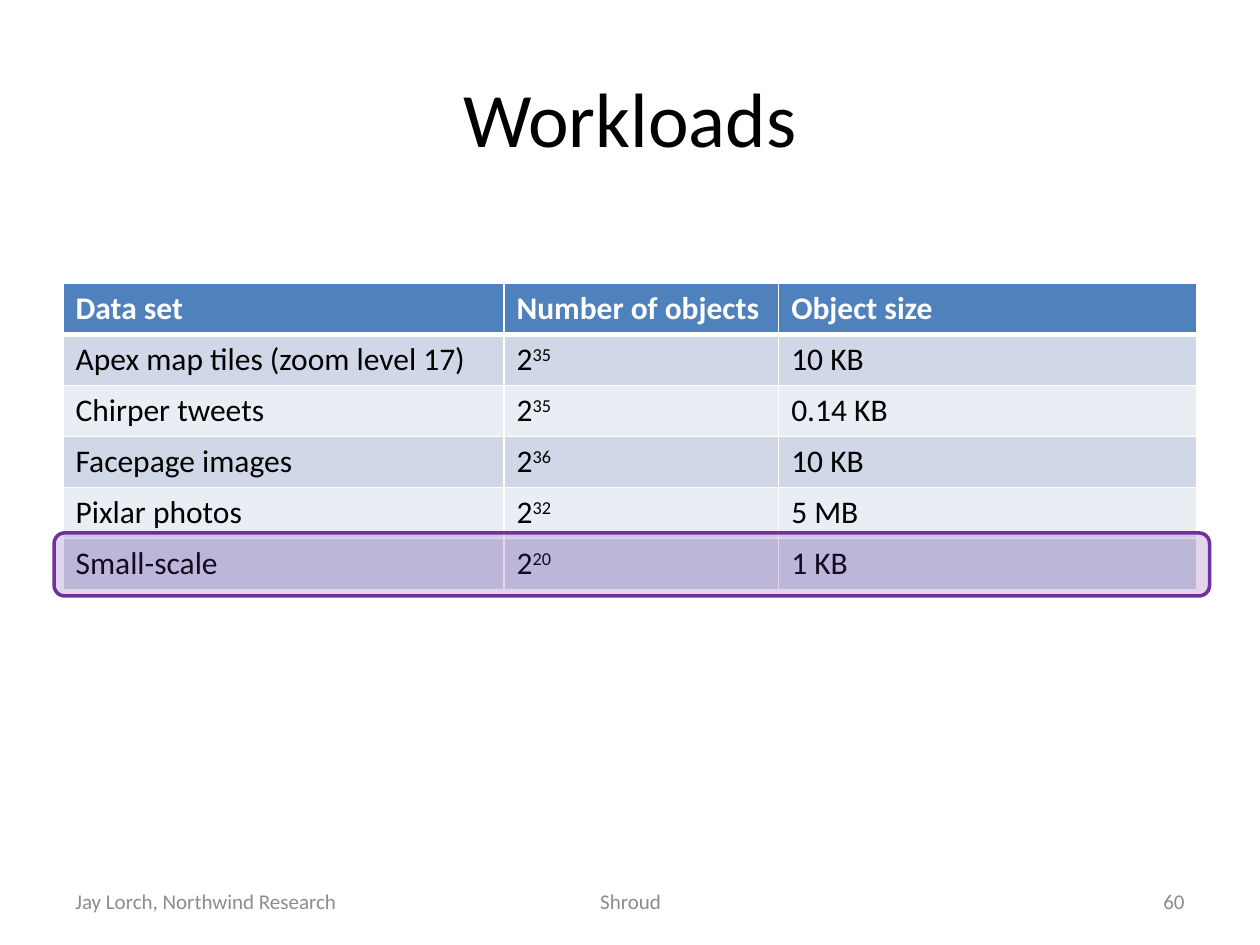
from lxml import etree
from pptx import Presentation
from pptx.dml.color import RGBColor
from pptx.enum.shapes import MSO_SHAPE
from pptx.enum.text import MSO_ANCHOR, PP_ALIGN
from pptx.oxml.ns import qn
from pptx.util import Emu, Pt

ROUNDED = MSO_SHAPE.ROUNDED_RECTANGLE
MIDDLE = MSO_ANCHOR.MIDDLE
LEFT, CENTER, RIGHT = PP_ALIGN.LEFT, PP_ALIGN.CENTER, PP_ALIGN.RIGHT
PX_PER_INCH = 200
EMU_PER_PX = 914400 // PX_PER_INCH

BLACK, WHITE, GRAY = "000000", "FFFFFF", "8C8C8C"
HEADER_BLUE, PURPLE = "4F81BD", "7030A0"
BANDS = ("E9EDF4", "D0D8E8")

COLUMN_WIDTHS = (700, 436, 664)
ROW_HEIGHT = 81
WORKLOADS = (
    ("Data set", "Number of objects", "Object size"),
    ("Apex map tiles (zoom level 17)", "2^35", "10 KB"),
    ("Chirper tweets", "2^35", "0.14 KB"),
    ("Facepage images", "2^36", "10 KB"),
    ("Pixlar photos", "2^32", "5 MB"),
    ("Small-scale", "2^20", "1 KB"),
)
FOOTERS = (
    (100, 466, "Jay Lorch, Northwind Research", LEFT),
    (684, 634, "Shroud", CENTER),
    (1434, 466, "60", RIGHT),
)


def px(length):
    return Emu(length * EMU_PER_PX)


def color(value):
    return RGBColor.from_string(value)


class SlideBuilder:
    font = "Calibri"

    def __init__(self, slide):
        self.slide = slide

    def run(self, paragraph, text, size, ink, bold=False, baseline=None):
        run = paragraph.add_run()
        run.text = text
        run.font.name = self.font
        run.font.size = Pt(size)
        run.font.bold = bold
        run.font.color.rgb = color(ink)
        if baseline:
            run.font._element.set("baseline", str(baseline * 1000))

    def text(self, box, text, size, ink, alignment):
        shape = self.slide.shapes.add_textbox(*map(px, box))
        frame = shape.text_frame
        frame.word_wrap = True
        frame.vertical_anchor = MIDDLE
        paragraph = frame.paragraphs[0]
        paragraph.alignment = alignment
        self.run(paragraph, text, size, ink)

    def borders(self, cell, widths):
        properties = cell._tc.get_or_add_tcPr()
        for index, (side, width) in enumerate(widths.items()):
            line = etree.Element(qn(f"a:ln{side}"), w=str(Pt(width)))
            fill = etree.SubElement(line, qn("a:solidFill"))
            etree.SubElement(fill, qn("a:srgbClr"), val=WHITE)
            properties.insert(index, line)

    def table(self, left, top, rows, column_widths, row_height):
        box = (left, top, sum(column_widths), row_height * len(rows))
        frame = self.slide.shapes.add_table(len(rows), len(column_widths), *map(px, box))
        table = frame.table
        for column, width in zip(table.columns, column_widths):
            column.width = px(width)
        for row_index, values in enumerate(rows):
            table.rows[row_index].height = px(row_height)
            header = row_index == 0
            top_width = 3 if row_index == 1 else 1
            widths = {"L": 1, "R": 1, "T": top_width, "B": 3 if header else 1}
            for column_index, value in enumerate(values):
                cell = table.cell(row_index, column_index)
                cell.fill.solid()
                cell.fill.fore_color.rgb = color(HEADER_BLUE if header else BANDS[row_index % 2])
                self.borders(cell, widths)
                paragraph = cell.text_frame.paragraphs[0]
                ink = WHITE if header else BLACK
                base, _, exponent = value.partition("^")
                self.run(paragraph, base, 18, ink, header)
                if exponent:
                    self.run(paragraph, exponent, 18, ink, header, 30)

    def highlight(self, box, ink, opacity):
        shape = self.slide.shapes.add_shape(ROUNDED, *map(px, box))
        shape.shadow.inherit = False
        shape.fill.solid()
        shape.fill.fore_color.rgb = color(ink)
        fill_color = shape._element.spPr.find(qn("a:solidFill"))[0]
        etree.SubElement(fill_color, qn("a:alpha"), val=str(opacity * 1000))
        shape.line.color.rgb = color(ink)
        shape.line.width = Pt(2)


def main():
    presentation = Presentation()
    presentation.slide_width = px(2000)
    presentation.slide_height = px(1500)
    builder = SlideBuilder(presentation.slides.add_slide(presentation.slide_layouts[6]))
    builder.text((100, 60, 1800, 250), "Workloads", 44, BLACK, CENTER)
    for left, width, text, alignment in FOOTERS:
        builder.text((left, 1390, width, 80), text, 12, GRAY, alignment)
    builder.table(100, 450, WORKLOADS, COLUMN_WIDTHS, ROW_HEIGHT)
    builder.highlight((86, 846, 1834, 100), PURPLE, 20)
    presentation.save("out.pptx")


if __name__ == "__main__":
    main()
